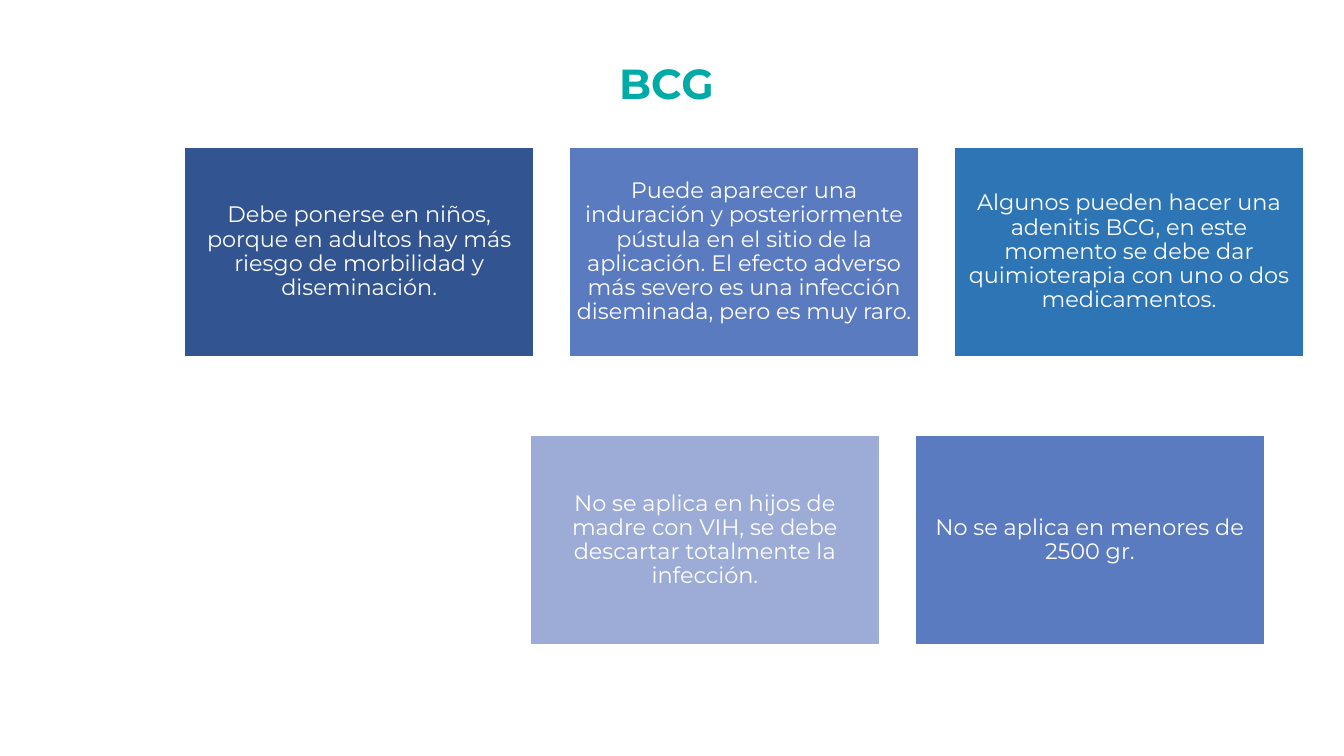
from dataclasses import dataclass

from pptx import Presentation
from pptx.dml.color import RGBColor
from pptx.enum.shapes import MSO_SHAPE
from pptx.enum.text import MSO_ANCHOR, MSO_AUTO_SIZE, PP_ALIGN
from pptx.shapes.autoshape import Shape
from pptx.slide import Slide
from pptx.util import Cm, Pt

FONT_NAME = "Montserrat"
TEAL = RGBColor(0x00, 0xAA, 0xA7)
NAVY = RGBColor(0x32, 0x54, 0x91)
INDIGO = RGBColor(0x5B, 0x7B, 0xC0)
BLUE = RGBColor(0x2E, 0x75, 0xB6)
LAVENDER = RGBColor(0x9D, 0xAC, 0xD6)
WHITE = RGBColor(0xFF, 0xFF, 0xFF)

CARD_WIDTH = 8.81
CARD_HEIGHT = 5.28
CARD_PITCH = 9.7
CARD_INSET = Cm(0.17)


@dataclass(frozen=True)
class Card:
    text: str
    fill: RGBColor


@dataclass(frozen=True)
class CardRow:
    left: float
    top: float
    cards: tuple[Card, ...]


ROWS = (
    CardRow(4.65, 3.71, (
        Card("Debe ponerse en niños, porque en adultos hay más riesgo de "
             "morbilidad y diseminación.", NAVY),
        Card("Puede aparecer una induración y posteriormente pústula en el sitio "
             "de la aplicación. El efecto adverso más severo es una infección "
             "diseminada, pero es muy raro.", INDIGO),
        Card("Algunos pueden hacer una adenitis BCG, en este momento se debe dar "
             "quimioterapia con uno o dos medicamentos.", BLUE),
    )),
    CardRow(13.36, 10.97, (
        Card("No se aplica en hijos de madre con VIH, se debe descartar "
             "totalmente la infección.", LAVENDER),
        Card("No se aplica en menores de 2500 gr.", INDIGO),
    )),
)


def write_text(shape: Shape, text: str, *, size: float, color: RGBColor,
               bold: bool = False, line_spacing: float = 1.0,
               space_after: float = 0) -> None:
    """Write one centred, wrapped paragraph into a shape."""
    shape.text_frame.word_wrap = True
    paragraph = shape.text_frame.paragraphs[0]
    paragraph.alignment = PP_ALIGN.CENTER
    paragraph.line_spacing = line_spacing
    paragraph.space_after = Pt(space_after)
    run = paragraph.add_run()
    run.text = text
    run.font.name = FONT_NAME
    run.font.size = Pt(size)
    run.font.bold = bold
    run.font.color.rgb = color


def add_title(slide: Slide) -> None:
    """Add the slide title."""
    title = slide.shapes.add_textbox(Cm(7.85), Cm(1.32), Cm(18.19), Cm(1.55))
    title.text_frame.auto_size = MSO_AUTO_SIZE.SHAPE_TO_FIT_TEXT
    write_text(title, "BCG ", size=30, color=TEAL, bold=True)


def add_card(slide: Slide, card: Card, left: float, top: float) -> None:
    """Add one filled card with its text."""
    shape = slide.shapes.add_shape(
        MSO_SHAPE.RECTANGLE, Cm(left), Cm(top), Cm(CARD_WIDTH), Cm(CARD_HEIGHT))
    shape.shadow.inherit = False
    shape.fill.solid()
    shape.fill.fore_color.rgb = card.fill
    shape.line.color.rgb = WHITE
    shape.line.width = Pt(1)
    frame = shape.text_frame
    frame.vertical_anchor = MSO_ANCHOR.MIDDLE
    frame.margin_left = frame.margin_right = CARD_INSET
    frame.margin_top = frame.margin_bottom = CARD_INSET
    write_text(shape, card.text, size=16, color=WHITE,
               line_spacing=0.9, space_after=5.6)


def main() -> None:
    """Build the slide and save it."""
    presentation = Presentation()
    presentation.slide_width = Cm(33.87)
    presentation.slide_height = Cm(19.05)
    slide = presentation.slides.add_slide(presentation.slide_layouts[6])
    add_title(slide)
    for row in ROWS:
        for column, card in enumerate(row.cards):
            add_card(slide, card, row.left + column * CARD_PITCH, row.top)
    presentation.save("out.pptx")


if __name__ == "__main__":
    main()
